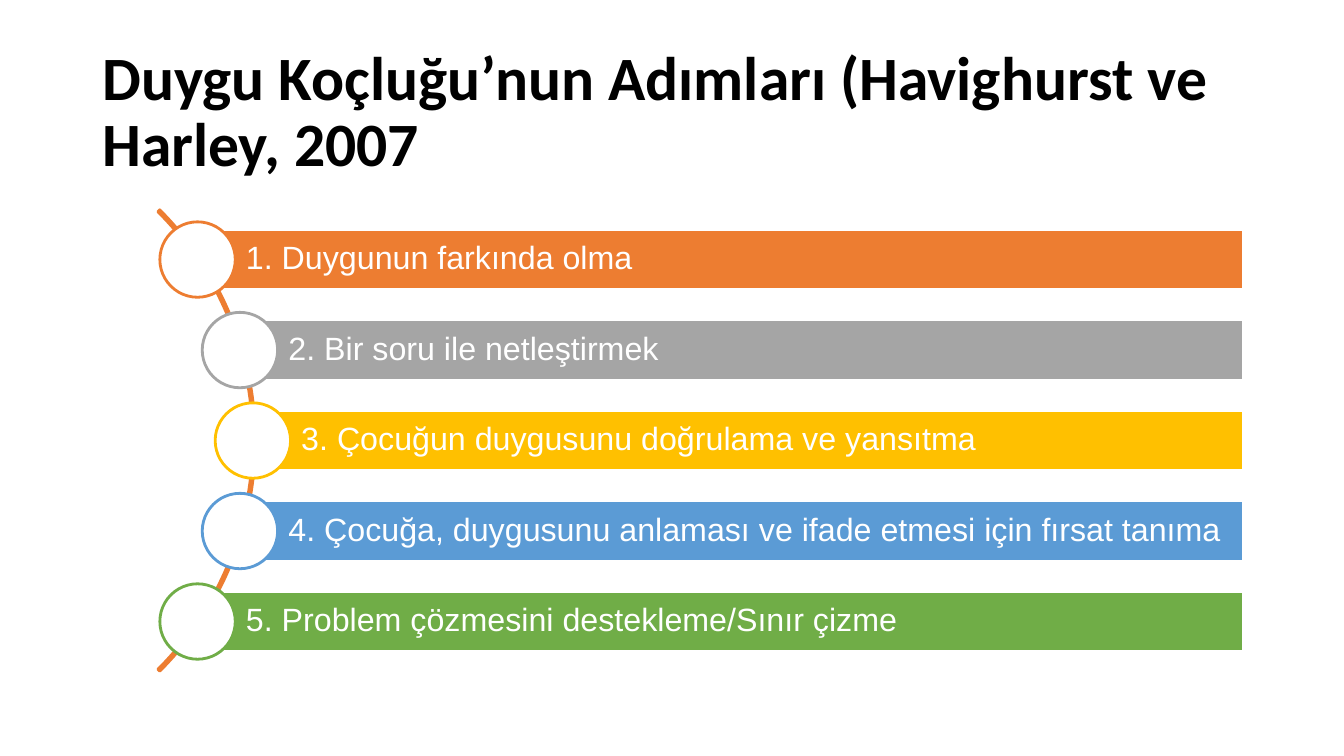
from dataclasses import dataclass
from math import sqrt

from pptx import Presentation
from pptx.dml.color import RGBColor
from pptx.enum.shapes import MSO_SHAPE
from pptx.enum.text import MSO_ANCHOR, PP_ALIGN
from pptx.util import Inches, Pt

COLUMNS, ROWS = 160, 90
CELL = Inches(1) / 12


@dataclass(frozen=True)
class Theme:
    ink: str = "000000"
    paper: str = "FFFFFF"
    arc: str = "ED7D31"
    steps: tuple = ("ED7D31", "A5A5A5", "FFC000", "5B9BD5", "70AD47")
    title_font: str = "Calibri"
    step_font: str = "Arial"
    title_size: int = 44
    step_size: int = 23
    outline: int = 2


@dataclass(frozen=True)
class Box:
    """An area in grid columns and rows."""
    left: float
    top: float
    width: float
    height: float

    def emu(self):
        return [round(side * CELL) for side in (self.left, self.top, self.width, self.height)]


THEME = Theme()
TITLE = "Duygu Koçluğu’nun Adımları (Havighurst ve Harley, 2007"
STEPS = (
    "1. Duygunun farkında olma",
    "2. Bir soru ile netleştirmek",
    "3. Çocuğun duygusunu doğrulama ve yansıtma",
    "4. Çocuğa, duygusunu anlaması ve ifade etmesi için fırsat tanıma",
    "5. Problem çözmesini destekleme/Sınır çizme",
)


def write(shape, text, font_format, frame_format):
    frame = shape.text_frame
    for name, value in {"word_wrap": True, "vertical_anchor": MSO_ANCHOR.MIDDLE,
                        **frame_format}.items():
        setattr(frame, name, value)
    paragraph = frame.paragraphs[0]
    paragraph.alignment = PP_ALIGN.LEFT
    paragraph.line_spacing = 0.9
    run = paragraph.add_run()
    run.text = text
    color = font_format.pop("color")
    for name, value in font_format.items():
        setattr(run.font, name, value)
    run.font.color.rgb = RGBColor.from_string(color)


def add_outlined(slide, preset, box, line, fill=None):
    shape = slide.shapes.add_shape(preset, *box.emu())
    shape.shadow.inherit = False
    if fill:
        shape.fill.solid()
        shape.fill.fore_color.rgb = RGBColor.from_string(fill)
    else:
        shape.fill.background()
    shape.line.color.rgb = RGBColor.from_string(line)
    shape.line.width = Pt(THEME.outline)
    return shape


def add_title(slide, box):
    write(slide.shapes.add_textbox(*box.emu()), TITLE,
          {"name": THEME.title_font, "size": Pt(THEME.title_size), "bold": True,
           "color": THEME.ink}, {})


def add_steps(slide, box):
    """Bars whose round markers sit along an arc bulging to the right."""
    pitch = 0.19 * box.height
    bar_height = pitch * 2 / 3
    marker = bar_height * 1.25
    radius = 0.68 * box.height
    arc_size = 1.37 * box.height
    middle = box.top + box.height / 2
    arc_center = box.left + 0.21 * box.height - radius

    arc = add_outlined(slide, MSO_SHAPE.BLOCK_ARC,
                       Box(arc_center - arc_size / 2, middle - arc_size / 2,
                           arc_size, arc_size), THEME.arc)
    for index, value in enumerate((189, 27, 0.004)):
        arc.adjustments[index] = value

    for index, (text, color) in enumerate(zip(STEPS, THEME.steps)):
        offset = (index - (len(STEPS) - 1) / 2) * pitch
        x = arc_center + sqrt(radius ** 2 - offset ** 2)
        y = middle + offset
        bar = add_outlined(slide, MSO_SHAPE.RECTANGLE,
                           Box(x, y - bar_height / 2, box.left + box.width - x, bar_height),
                           THEME.paper, color)
        write(bar, text,
              {"name": THEME.step_font, "size": Pt(THEME.step_size), "color": THEME.paper},
              {"margin_left": Inches(0.48), "margin_right": Inches(0.06),
               "margin_top": Inches(0.06), "margin_bottom": Inches(0.06)})
        add_outlined(slide, MSO_SHAPE.OVAL,
                     Box(x - marker / 2, y - marker / 2, marker, marker),
                     color, THEME.paper)


def main():
    deck = Presentation()
    deck.slide_width = round(COLUMNS * CELL)
    deck.slide_height = round(ROWS * CELL)
    slide = deck.slides.add_slide(deck.slide_layouts[6])
    add_title(slide, Box(11, 4.8, 138, 17.4))
    add_steps(slide, Box(18.2, 24.1, 129.8, 56.7))
    deck.save("out.pptx")


if __name__ == "__main__":
    main()
